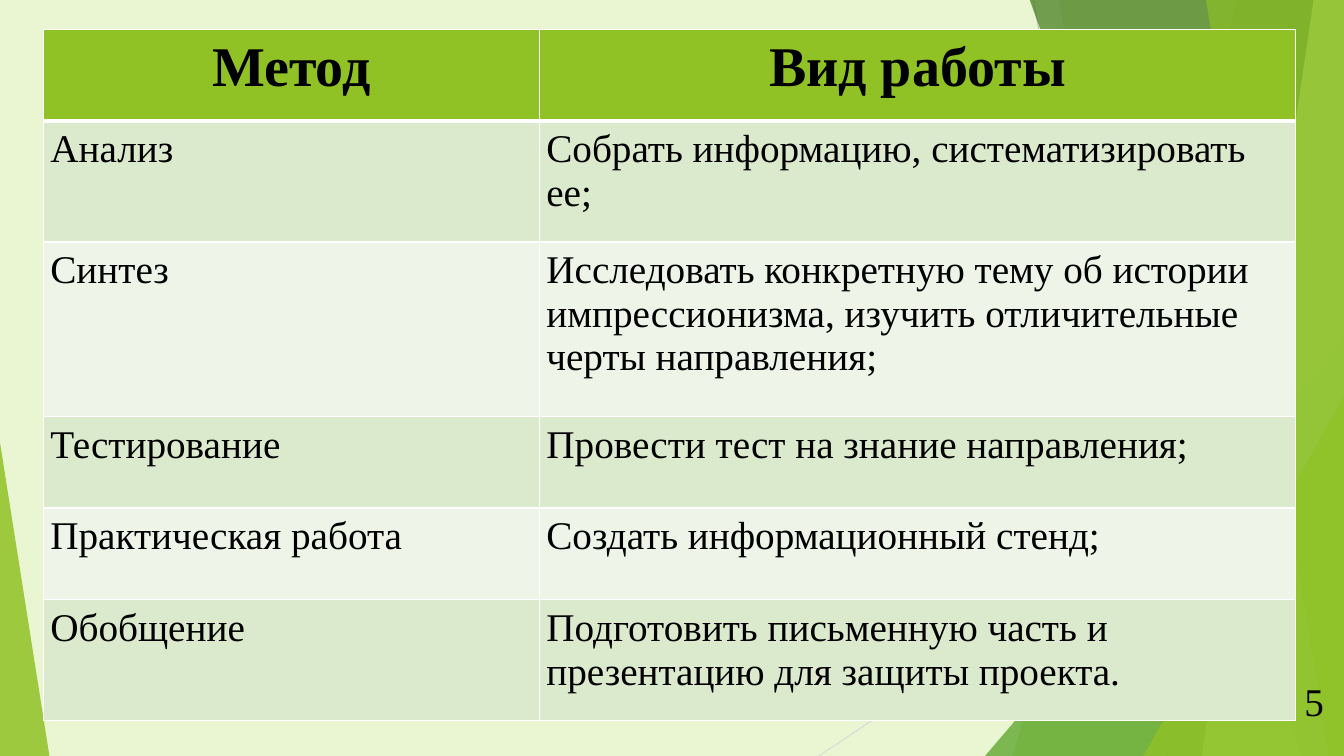
from lxml import etree
from pptx import Presentation
from pptx import util as u
from pptx.dml.color import RGBColor
from pptx.enum import shapes, text
from pptx.oxml.ns import qn

SCALE = 9144
WIDTH, HEIGHT = 1333, 750
COLORS = {
    "background": "EAF6D1", "lime": "90C226", "green": "54A021",
    "forest": "3F7819", "pale": "C0E474", "gray": "BFBFBF", "silver": "D9D9D9",
    "odd": "DBE9CD", "even": "EEF4E8", "white": "FFFFFF", "black": "000000",
}
RAYS = [
    (1228, 1004, "lime", 30),
    (1050, 1183, "lime", 20),
    (977, 333, 356, 417, 1, "green", 72),
    (1021, 1291, "forest", 70),
    (1303, 1192, "pale", 70),
    (1196, 1318, "lime", 65),
    (1134, 393, 199, 357, 1, "lime", 80),
    (0, 439, 49, 311, 0, "lime", 85),
]
METHODS = [
    ("Метод", "Вид работы"),
    ("Анализ", "Собрать информацию, систематизировать ее;"),
    ("Синтез", "Исследовать конкретную тему об истории импрессионизма, "
               "изучить отличительные черты направления;"),
    ("Тестирование", "Провести тест на знание направления;"),
    ("Практическая работа", "Создать информационный стенд;"),
    ("Обобщение", "Подготовить письменную часть и презентацию для защиты проекта."),
]


def px(*lengths):
    return [u.Emu(length * SCALE) for length in lengths]


def rgb(name):
    return RGBColor.from_string(COLORS[name])


class Painter:
    font = "Times New Roman"

    def __init__(self, page):
        self.page = page
        fill = page.background.fill
        fill.solid()
        fill.fore_color.rgb = rgb("background")

    def line(self, x1, y1, x2, y2, color):
        line = self.page.shapes.add_connector(
            shapes.MSO_CONNECTOR.STRAIGHT, *px(x1, y1, x2, y2))
        line.line.color.rgb = rgb(color)
        line.line.width = u.Pt(0.75)
        etree.SubElement(line._element.spPr, qn("a:effectLst"))

    def tint(self, shape, color, opacity):
        shape.shadow.inherit = False
        shape.line.fill.background()
        shape.fill.solid()
        shape.fill.fore_color.rgb = rgb(color)
        solid = shape._element.spPr.find(qn("a:solidFill"))
        etree.SubElement(solid[0], qn("a:alpha"), val=str(opacity * 1000))

    def band(self, top_x, bottom_x, color, opacity):
        outline = self.page.shapes.build_freeform(top_x, -1, scale=SCALE)
        outline.add_line_segments(
            [(WIDTH, -1), (WIDTH, HEIGHT), (bottom_x, HEIGHT)], close=True)
        self.tint(outline.convert_to_shape(), color, opacity)

    def triangle(self, left, top, width, height, apex, color, opacity):
        shape = self.page.shapes.add_shape(
            shapes.MSO_SHAPE.ISOSCELES_TRIANGLE, *px(left, top, width, height))
        shape.adjustments[0] = apex
        self.tint(shape, color, opacity)

    def set_words(self, frame, words, size, align, bold=False):
        frame.text = words
        para = frame.paragraphs[0]
        para.alignment = align
        font = para.runs[0].font
        font.name, font.size, font.bold = self.font, u.Pt(size), bold
        font.color.rgb = rgb("black")

    def border(self, cell, side, points):
        edge = etree.SubElement(cell._tc.get_or_add_tcPr(), qn("a:" + side),
                                w=str(u.Pt(points)))
        solid = etree.SubElement(edge, qn("a:solidFill"))
        etree.SubElement(solid, qn("a:srgbClr"), val=COLORS["white"])

    def table(self, left, top, columns, heights, rows):
        table = self.page.shapes.add_table(
            len(rows), len(columns),
            *px(left, top, sum(columns), sum(heights))).table
        for column, width in zip(table.columns, px(*columns)):
            column.width = width
        for row, height in zip(table.rows, px(*heights)):
            row.height = height
        for i, row in enumerate(rows):
            header = i == 0
            color = "lime" if header else ("even", "odd")[i % 2]
            align = text.PP_ALIGN.CENTER if header else text.PP_ALIGN.LEFT
            for j, words in enumerate(row):
                cell = table.cell(i, j)
                cell.margin_left = cell.margin_right = px(7)[0]
                cell.margin_top = cell.margin_bottom = px(7)[0]
                self.set_words(cell.text_frame, words, 40 if header else 28, align, header)
                for side in ("lnL", "lnR", "lnT", "lnB"):
                    thick = (i, side) in ((0, "lnB"), (1, "lnT"))
                    self.border(cell, side, 3 if thick else 1)
                cell.fill.solid()
                cell.fill.fore_color.rgb = rgb(color)

    def label(self, left, top, width, height, words, size):
        box = self.page.shapes.add_textbox(*px(left, top, width, height))
        frame = box.text_frame
        frame.word_wrap = True
        frame.vertical_anchor = text.MSO_ANCHOR.MIDDLE
        self.set_words(frame, words, size, text.PP_ALIGN.RIGHT)


def main():
    deck = Presentation()
    deck.slide_width, deck.slide_height = px(WIDTH, HEIGHT)
    painter = Painter(deck.slides.add_slide(deck.slide_layouts[6]))
    painter.line(1025, 0, 1158, HEIGHT, "gray")
    painter.line(WIDTH, 403, 812, HEIGHT, "silver")
    for ray in RAYS:
        draw = painter.band if len(ray) == 4 else painter.triangle
        draw(*ray)
    painter.table(43, 29, [492, 750], [91, 120, 173, 91, 91, 120], METHODS)
    painter.label(1248, 675, 75, 40, "5", 28)
    deck.save("out.pptx")


if __name__ == "__main__":
    main()
